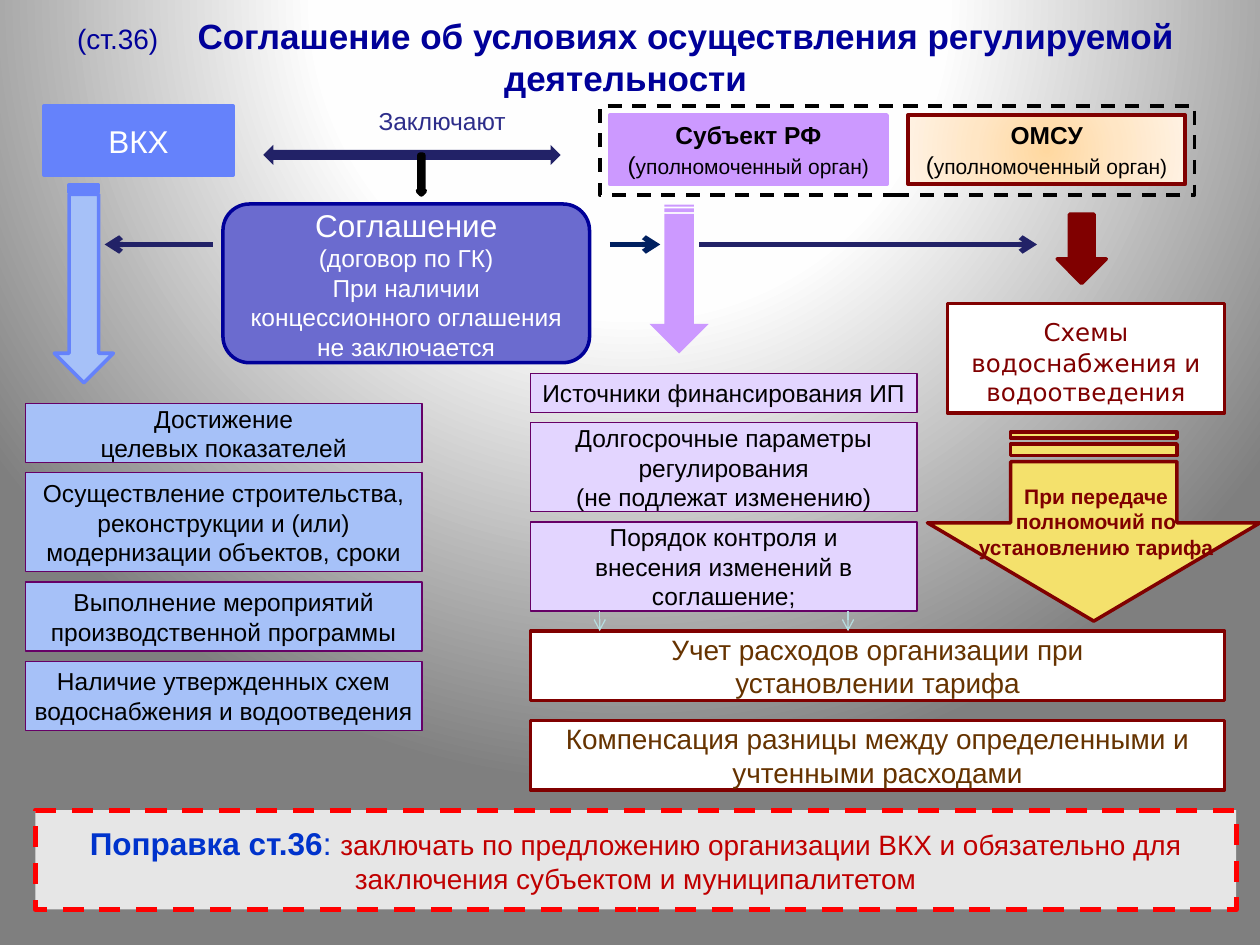
"""Build the slide on the agreement about the terms of regulated activity."""
import lxml.etree
import pptx
import pptx.dml.color
import pptx.enum.dml
import pptx.enum.shapes
import pptx.enum.text
import pptx.oxml
import pptx.oxml.ns
import pptx.util

Pt = pptx.util.Pt
colour = pptx.dml.color.RGBColor.from_string
qn = pptx.oxml.ns.qn
Kind = pptx.enum.shapes.MSO_SHAPE
Dash = pptx.enum.dml.MSO_LINE

deck = pptx.Presentation()
deck.slide_width, deck.slide_height = Pt(720), Pt(540)
page = deck.slides.add_slide(deck.slide_layouts[5])


def write(frame, lines, wrap=True):
    """Fill a frame with centred lines of (text, size, colour, bold, font) spans."""
    frame.word_wrap = wrap
    frame.auto_size = pptx.enum.text.MSO_AUTO_SIZE.NONE
    frame.vertical_anchor = pptx.enum.text.MSO_ANCHOR.MIDDLE
    for index, spans in enumerate(lines):
        para = frame.add_paragraph() if index else frame.paragraphs[0]
        para.alignment = pptx.enum.text.PP_ALIGN.CENTER
        for text, size, ink, bold, font in spans:
            span = para.add_run()
            span.text = text
            span.font.size, span.font.bold, span.font.name = Pt(size), bold, font
            span.font.color.rgb = colour(ink)


def draw(kind, place, fill, line, width=2, turn=0):
    """Add a preset shape with a plain fill and outline."""
    box = page.shapes.add_shape(kind, *map(Pt, place))
    box.shadow.inherit = False
    box.rotation = turn
    if fill:
        box.fill.solid()
        box.fill.fore_color.rgb = colour(fill)
    else:
        box.fill.background()
    if line:
        box.line.color.rgb = colour(line)
        box.line.width = Pt(width)
    else:
        box.line.fill.background()
    return box


title = page.shapes.title
title.left, title.top, title.width, title.height = map(Pt, (14.4, 15.1, 686.2, 33.8))
write(title.text_frame, [[
    ("(ст.36)", 16, "000099", False, "Arial"),
    (" ", 16, "000099", False, "Arial"),
    ("Соглашение об условиях осуществления регулируемой деятельности", 20, "000099", True, "Arial"),
]])
title.text_frame.paragraphs[0].runs[1].font._element.set("spc", "1800")

operator = draw(Kind.RECTANGLE, (25.2, 60.5, 108, 39.6), "6582FB", "6582FB")
write(operator.text_frame, [[("ВКХ", 18, "FFFFFF", False, "Arial")]])

frame_box = draw(Kind.RECTANGLE, (342.7, 60.5, 339.9, 51), None, "000000")
frame_box.line.dash_style = Dash.DASH

region = draw(Kind.RECTANGLE, (348.5, 65.7, 158.4, 39.6), "CC99FF", "CC99FF")
municipality = draw(Kind.RECTANGLE, (518.9, 65.7, 158.4, 39.6), "FFE6C5", "800000")
for box, name in ((region, "Субъект РФ"), (municipality, "ОМСУ")):
    write(box.text_frame, [
        [(name, 14, "000000", True, "Arial")],
        [("(", 14, "000000", False, "Arial"),
         ("уполномоченный орган)", 12, "000000", False, "Arial")],
    ])

gradients = (
    (page.background, page, ((0, "FFFFFF"), (40, "FEFEFE"), (100, "7F7F7F")), (50, -80, 50, 180)),
    (municipality, municipality, ((0, "FFD8A0"), (50, "FFE6C5"), (100, "FFF2E3")), (50, 50, 50, 50)),
)
for painted, owner, stops, centre in gradients:
    painted.fill.gradient()
    gradient = owner._element.find(".//" + qn("a:gradFill"))
    for child in list(gradient):
        gradient.remove(child)
    stop_list = lxml.etree.SubElement(gradient, qn("a:gsLst"))
    for position, shade in stops:
        stop = lxml.etree.SubElement(stop_list, qn("a:gs"), pos=str(position * 1000))
        lxml.etree.SubElement(stop, qn("a:srgbClr"), val=shade)
    circle = lxml.etree.SubElement(gradient, qn("a:path"), path="circle")
    focus = lxml.etree.SubElement(circle, qn("a:fillToRect"))
    for side, share in zip("ltrb", centre):
        focus.set(side, str(share * 1000))

draw(Kind.LEFT_RIGHT_ARROW, (150.5, 82.8, 169.9, 11.5), "222267", None)
draw(Kind.DOWN_ARROW, (239, 88.6, 3.6, 22.3), "222267", "000000", 3)

agreement = draw(Kind.ROUNDED_RECTANGLE, (127.4, 116.6, 209.5, 90.7), "6B6BCF", "000099")
write(agreement.text_frame, [
    [("Соглашение", 18, "FFFFFF", False, "Arial")],
    [("(договор по ГК)", 14, "FFFFFF", False, "Arial")],
    [("При наличии концессионного оглашения не заключается", 14, "FFFFFF", False, "Arial")],
])

draw(Kind.STRIPED_RIGHT_ARROW, (-8.6, 145.4, 113, 33.8), "A6C1F8", "6582FB", turn=90)
draw(Kind.STRIPED_RIGHT_ARROW, (345.6, 142.6, 85, 33.8), "CC99FF", None, turn=90)
draw(Kind.DOWN_ARROW, (604.1, 122.4, 28.1, 39.6), "800000", "800000")

schemes = draw(Kind.RECTANGLE, (541.4, 173.5, 158.4, 62.6), "FFFFFF", "800000")
write(schemes.text_frame, [[
    ("Схемы", 14, "800000", False, "DejaVu Sans"),
    (" ", 18, "800000", False, "Arial"),
    ("водоснабжения и водоотведения", 14, "800000", False, "DejaVu Sans"),
]])

columns = (
    (14.4, 230.4, 226.8, "A6C1F8", (
        (34, ("Достижение", "целевых показателей")),
        (56.7, ("Осуществление строительства,", "реконструкции и (или)", "модернизации объектов, сроки")),
        (39.6, ("Выполнение мероприятий", "производственной программы")),
        (39.6, ("Наличие утвержденных схем", "водоснабжения и водоотведения")),
    )),
    (303.1, 213.3, 221, "E3D5FF", (
        (22.5, ("Источники финансирования ИП",)),
        (51, ("Долгосрочные параметры", "регулирования", "(не подлежат изменению)")),
        (51, ("Порядок контроля и", "внесения изменений в", "соглашение;")),
    )),
)
for left, top, width, fill, items in columns:
    for height, lines in items:
        box = draw(Kind.RECTANGLE, (left, top, width, height), fill, "660066", 0.75)
        write(box.text_frame, [[(line, 14, "000000", False, "Arial")] for line in lines], wrap=False)
        top += height + 5.7

outcomes = (
    (360.7, ("Учет расходов организации при", "установлении тарифа")),
    (411.8, ("Компенсация разницы между определенными и учтенными расходами",)),
)
for top, lines in outcomes:
    box = draw(Kind.RECTANGLE, (303.1, top, 396.7, 39.6), "FFFFFF", "800000")
    write(box.text_frame, [[(line, 16, "663300", False, "Arial")] for line in lines])

transfer = draw(Kind.STRIPED_RIGHT_ARROW, (571, 205.9, 108, 190.1), "F4E16C", "800000", turn=90)
transfer.adjustments[0], transfer.adjustments[1] = 0.5, 0.52

labels = (
    ((173.5, 60.5, 158.4, 17.3), ("Заключают", 14, "2D2D8A", False, "Arial")),
    ((547.2, 264.2, 158.4, 67.7),
     ("При передаче полномочий по установлению тарифа", 12, "800000", True, "Arial")),
)
for place, span in labels:
    write(page.shapes.add_textbox(*map(Pt, place)).text_frame, [[span]])

amendment = draw(Kind.RECTANGLE, (20.2, 463, 686.2, 56.7), "E6E6E6", "FF0000", 3)
amendment.line.dash_style = Dash.DASH
write(amendment.text_frame, [[
    ("Поправка ст.36", 18, "0033CC", True, "Arial"),
    (": ", 18, "0033CC", False, "Arial"),
    ("заключать по предложению организации ВКХ и обязательно для заключения субъектом и муниципалитетом",
     16, "C00000", False, "Arial"),
]])

arrows = (
    ((399.6, 139.7, 592.6, 139.7), "222267", 3),
    ((348.5, 139.7, 377.3, 139.7), "002060", 3),
    ((121.7, 139.7, 59.8, 139.7), "222267", 3),
    ((342.7, 349.2, 342.7, 360.7), "B6DCDF", 0.75),
    ((484.6, 349.2, 484.6, 360.7), "B6DCDF", 0.75),
)
for ends, ink, width in arrows:
    arrow = page.shapes.add_connector(pptx.enum.shapes.MSO_CONNECTOR.STRAIGHT, *map(Pt, ends))
    arrow.line.color.rgb = colour(ink)
    arrow.line.width = Pt(width)
    lxml.etree.SubElement(arrow.line._get_or_add_ln(), qn("a:tailEnd"), type="arrow")
    lxml.etree.SubElement(arrow._element.spPr, qn("a:effectLst"))

deck.save("out.pptx")
